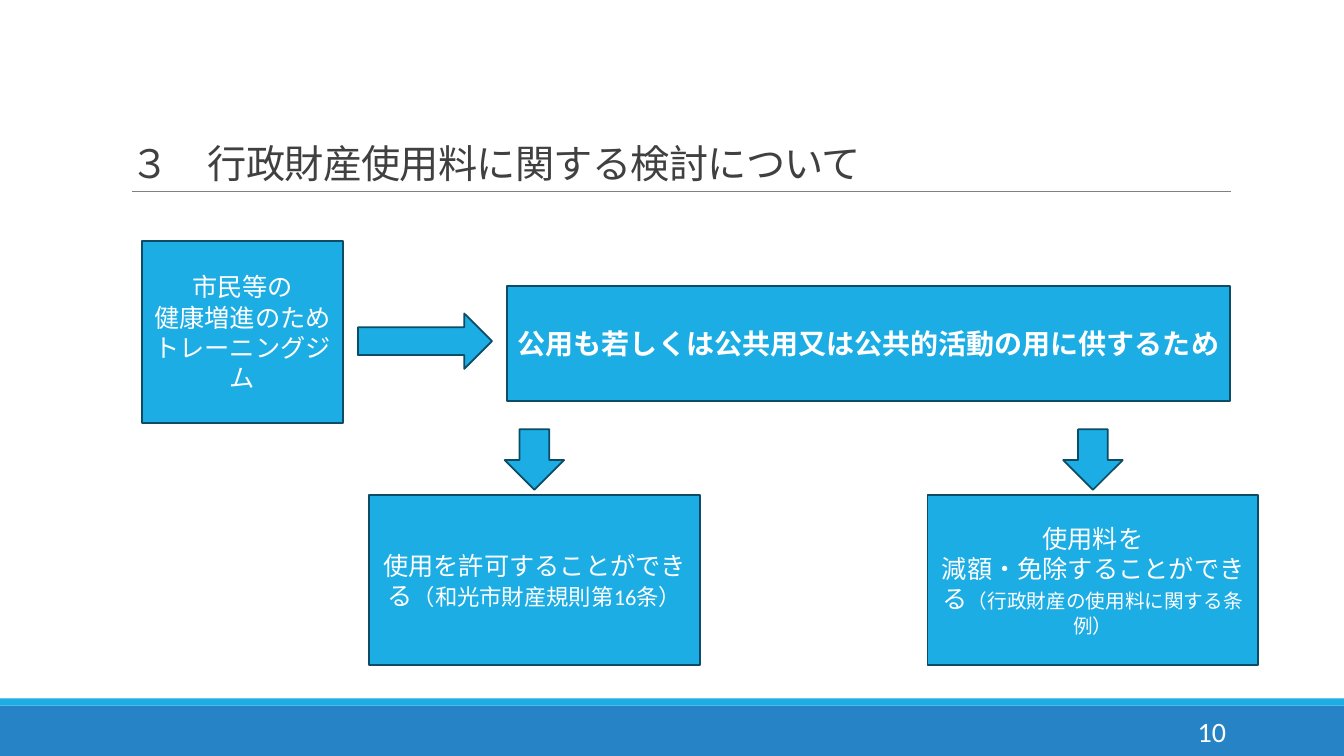
from dataclasses import dataclass

from pptx import Presentation
from pptx.dml.color import RGBColor
from pptx.enum.shapes import MSO_CONNECTOR, MSO_SHAPE
from pptx.enum.text import MSO_ANCHOR, PP_ALIGN
from pptx.oxml.ns import qn
from pptx.util import Inches, Pt
from lxml.etree import SubElement


@dataclass(frozen=True)
class Theme:
    white: RGBColor = RGBColor(0xFF, 0xFF, 0xFF)
    accent: RGBColor = RGBColor(0x1C, 0xAD, 0xE4)
    outline: RGBColor = RGBColor(0x0C, 0x4C, 0x64)
    footer: RGBColor = RGBColor(0x26, 0x83, 0xC6)
    title: RGBColor = RGBColor(0x40, 0x40, 0x40)
    rule: RGBColor = RGBColor(0x80, 0x80, 0x80)
    body_font: str = "Calibri"
    title_font: str = "Noto Sans CJK JP"
    title_size: int = 28
    strong_size: int = 20
    body_size: int = 18
    note_size: int = 16
    small_size: int = 14


THEME = Theme()


def apply_format(target, values):
    for name, value in values.items():
        setattr(target, name, value)


def add_block(slide, kind, box, fill, line=None):
    shape = slide.shapes.add_shape(kind, *map(Inches, box))
    shape.shadow.inherit = False
    shape.fill.solid()
    shape.fill.fore_color.rgb = fill
    if line is None:
        shape.line.fill.background()
    else:
        shape.line.color.rgb = line
        shape.line.width = Pt(1.25)
    return shape


def write_text(shape, paragraphs, alignment=PP_ALIGN.CENTER, anchor=MSO_ANCHOR.MIDDLE,
               color=THEME.white, font_name=THEME.body_font, bold=False):
    frame = shape.text_frame
    apply_format(frame, {"word_wrap": True, "vertical_anchor": anchor})
    for index, runs in enumerate(paragraphs):
        paragraph = frame.add_paragraph() if index else frame.paragraphs[0]
        paragraph.alignment = alignment
        for text, size in runs:
            run = paragraph.add_run()
            run.text = text
            apply_format(run.font, {"name": font_name, "size": Pt(size), "bold": bold})
            run.font.color.rgb = color
    return frame


def add_title(slide, box):
    left, top, width, height = box
    shape = slide.shapes.add_textbox(*map(Inches, box))
    frame = write_text(shape, [[("３　行政財産使用料に関する検討について", THEME.title_size)]],
                       PP_ALIGN.LEFT, MSO_ANCHOR.BOTTOM, THEME.title, THEME.title_font)
    paragraph = frame.paragraphs[0]
    paragraph.line_spacing = 0.85
    properties = paragraph.runs[0].font._element
    properties.set("spc", "-50")
    SubElement(properties, qn("a:ea"), typeface=THEME.title_font)
    bottom = top + height
    rule = slide.shapes.add_connector(MSO_CONNECTOR.STRAIGHT, Inches(left + 0.11), Inches(bottom),
                                      Inches(left + width + 0.01), Inches(bottom))
    rule.line.color.rgb = THEME.rule
    rule.line.width = Pt(0.5)
    SubElement(rule._element.spPr, qn("a:effectLst"))


def add_box(slide, box, paragraphs, bold=False):
    shape = add_block(slide, MSO_SHAPE.RECTANGLE, box, THEME.accent, THEME.outline)
    write_text(shape, paragraphs, bold=bold)


def add_flow(slide, box):
    left, top, width, height = box
    add_box(slide, (left, top, 1.99, 1.81),
            [[("市民等の", THEME.body_size)],
             [("健康増進のためトレーニングジム", THEME.body_size)]])
    add_block(slide, MSO_SHAPE.RIGHT_ARROW, (left + 2.14, top + 0.72, 1.33, 0.55),
              THEME.accent, THEME.outline)
    add_box(slide, (left + 3.62, top + 0.45, 7.17, 1.14),
            [[("公用も若しくは公共用又は公共的活動の用に供するため", THEME.strong_size)]], bold=True)

    outcomes = [
        [[("使用を許可することができる", THEME.body_size),
          ("（和光市財産規則第16条）", THEME.note_size)]],
        [[("使用料を", THEME.body_size)],
         [("減額・免除することができる", THEME.body_size),
          ("（行政財産の使用料に関する条例）", THEME.small_size)]],
    ]
    outcome_width, outcome_height, arrow_width = 3.28, 1.69, 0.59
    outcome_top = top + height - outcome_height
    for index, paragraphs in enumerate(outcomes):
        outcome_left = left + width - outcome_width - 5.54 * (len(outcomes) - 1 - index)
        arrow_left = outcome_left + (outcome_width - arrow_width) / 2
        add_block(slide, MSO_SHAPE.DOWN_ARROW, (arrow_left, outcome_top - 0.65, arrow_width, 0.6),
                  THEME.accent, THEME.outline)
        add_box(slide, (outcome_left, outcome_top, outcome_width, outcome_height), paragraphs)


def add_footer(slide, box):
    left, top, width, height = box
    stripe = 0.07
    add_block(slide, MSO_SHAPE.RECTANGLE, (left, top + stripe, width, height - stripe), THEME.footer)
    add_block(slide, MSO_SHAPE.RECTANGLE, (left, top, width, stripe), THEME.accent)
    number = slide.shapes.add_textbox(*map(Inches, (left + width - 2.5, top + 0.13, 1.43, 0.4)))
    write_text(number, [[("10", THEME.strong_size)]], PP_ALIGN.RIGHT)


def main():
    presentation = Presentation()
    apply_format(presentation, {"slide_width": Inches(13.33), "slide_height": Inches(7.5)})
    slide = presentation.slides.add_slide(presentation.slide_layouts[6])
    add_footer(slide, (0, 6.93, 13.33, 0.57))
    add_title(slide, (1.2, 0.31, 11, 1.59))
    add_flow(slide, (1.41, 2.39, 11.07, 4.21))
    presentation.save("out.pptx")


if __name__ == "__main__":
    main()
